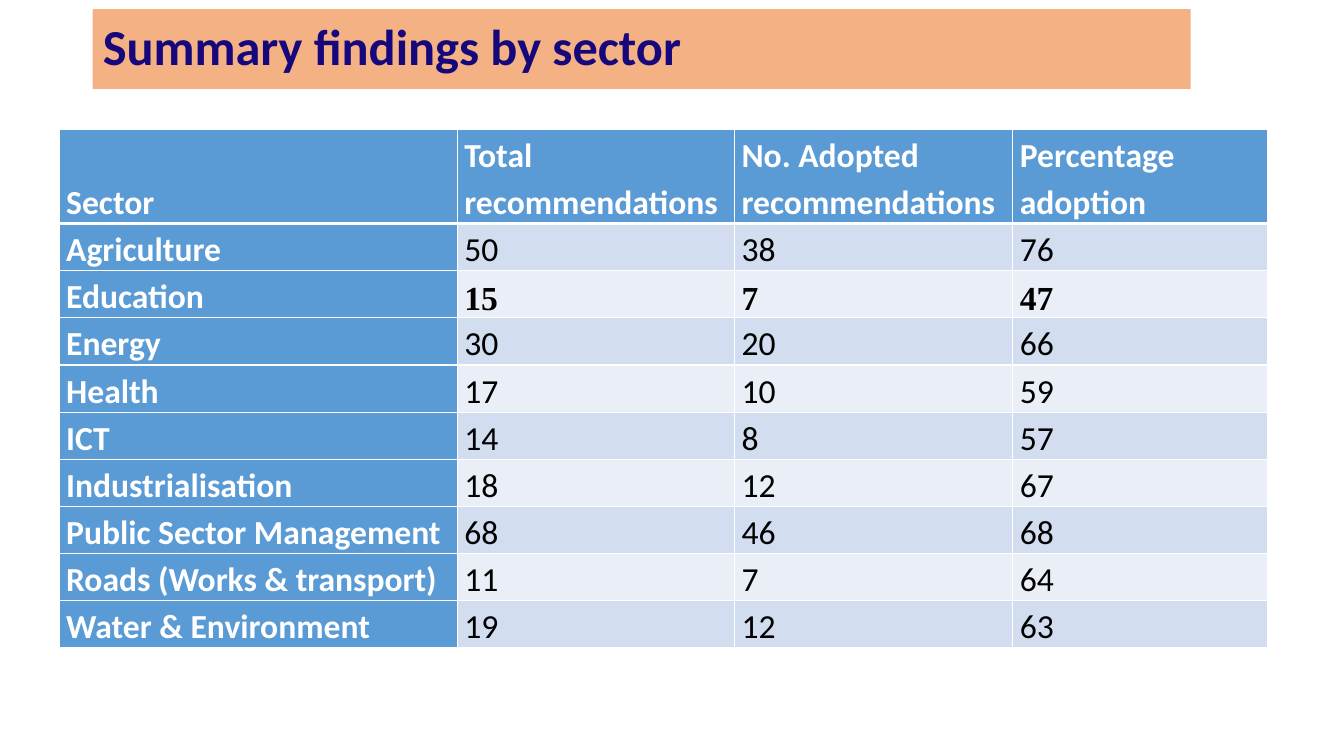
from lxml import etree
from pptx import Presentation
from pptx import util as u
from pptx.dml.color import RGBColor
from pptx.enum import text as t
from pptx.oxml.ns import qn

HUES = {"peach": "F4B183", "navy": "16087C", "blue": "5B9BD5", "dark": "D2DEEF",
        "light": "EAEFF7", "white": "FFFFFF", "black": "000000"}

HEAD = ["Sector", "Total recommendations", "No. Adopted recommendations",
        "Percentage adoption"]
DATA = [
    ["Agriculture", 50, 38, 76],
    ["Education", 15, 7, 47],
    ["Energy", 30, 20, 66],
    ["Health", 17, 10, 59],
    ["ICT", 14, 8, 57],
    ["Industrialisation", 18, 12, 67],
    ["Public Sector Management", 68, 46, 68],
    ["Roads (Works & transport)", 11, 7, 64],
    ["Water & Environment", 19, 12, 63],
]


def apply(item, props):
    for name, value in props.items():
        setattr(item, name, value)


class Deck:
    """Holds the style and the current slide; lengths are percent of the slide."""
    base = {"name": "Calibri", "size": u.Pt(24), "bold": True}

    def __init__(self):
        self.prs = Presentation()
        apply(self.prs, {"slide_width": u.Inches(13.33), "slide_height": u.Inches(7.5)})
        self.slide = self.prs.slides.add_slide(self.prs.slide_layouts[5])

    def wide(self, share):
        return round(self.prs.slide_width * share / 100)

    def high(self, share):
        return round(self.prs.slide_height * share / 100)

    def paint(self, item, hue):
        item.fill.solid()
        item.fill.fore_color.rgb = RGBColor.from_string(HUES[hue])

    def label(self, frame, words, hue, pitch, **font):
        frame.text = str(words)
        para = frame.paragraphs[0]
        apply(para, {"alignment": t.PP_ALIGN.LEFT, "line_spacing": pitch})
        face = para.runs[0].font
        apply(face, {**self.base, **font})
        face.color.rgb = RGBColor.from_string(HUES[hue])

    def title(self, words, left, top, width, height):
        box = self.slide.shapes.title
        apply(box, {"left": self.wide(left), "top": self.high(top),
                    "width": self.wide(width), "height": self.high(height)})
        self.paint(box, "peach")
        apply(box.text_frame, {"vertical_anchor": t.MSO_ANCHOR.MIDDLE,
                               "word_wrap": True, "auto_size": t.MSO_AUTO_SIZE.NONE})
        self.label(box.text_frame, words, "navy", 0.9, size=u.Pt(36))

    def edge(self, cell, **sides):
        props = cell._tc.get_or_add_tcPr()
        for side, points in sides.items():
            line = etree.SubElement(props, qn("a:ln" + side), w=str(u.Pt(points)))
            fill = etree.SubElement(line, qn("a:solidFill"))
            etree.SubElement(fill, qn("a:srgbClr"), val=HUES["white"])

    def cell(self, cell, words, fill, hue, sides, **font):
        apply(cell, {"vertical_anchor": t.MSO_ANCHOR.BOTTOM,
                     "margin_left": u.Inches(0.07), "margin_right": u.Inches(0.07),
                     "margin_top": 0, "margin_bottom": 0})
        self.edge(cell, **sides)
        self.paint(cell, fill)
        self.label(cell.text_frame, words, hue, 1.15, **font)

    def table(self, rows, left, top, cols, head, body, strong):
        tall = [head] + [body] * (len(rows) - 1)
        grid = self.slide.shapes.add_table(
            len(rows), len(cols), self.wide(left), self.high(top),
            self.wide(sum(cols)), self.high(sum(tall))).table
        for col, share in zip(grid.columns, cols):
            col.width = self.wide(share)
        for r, row in enumerate(rows):
            grid.rows[r].height = self.high(tall[r])
            # Thick rule between the header and the first body row
            sides = {"L": 1, "R": 1, "T": 3 if r == 1 else 1, "B": 3 if r == 0 else 1}
            for c, words in enumerate(row):
                if r == 0 or c == 0:
                    look = {"fill": "blue", "hue": "white"}
                else:
                    look = {"fill": "dark" if r % 2 else "light", "hue": "black",
                            "bold": row[0] == strong}
                    if row[0] == strong:
                        look["name"] = "Times New Roman"
                self.cell(grid.cell(r, c), words, sides=sides, **look)


def main():
    deck = Deck()
    # Title band
    deck.title("Summary findings by sector", 6.9, 1.2, 81.7, 10.55)
    # Sector table, with the Education figures set apart
    deck.table([HEAD] + DATA, left=4.4, top=17.1, cols=[29.63, 20.63, 20.7, 18.98],
               head=12.4, body=6.13, strong="Education")
    deck.prs.save("out.pptx")


if __name__ == "__main__":
    main()
